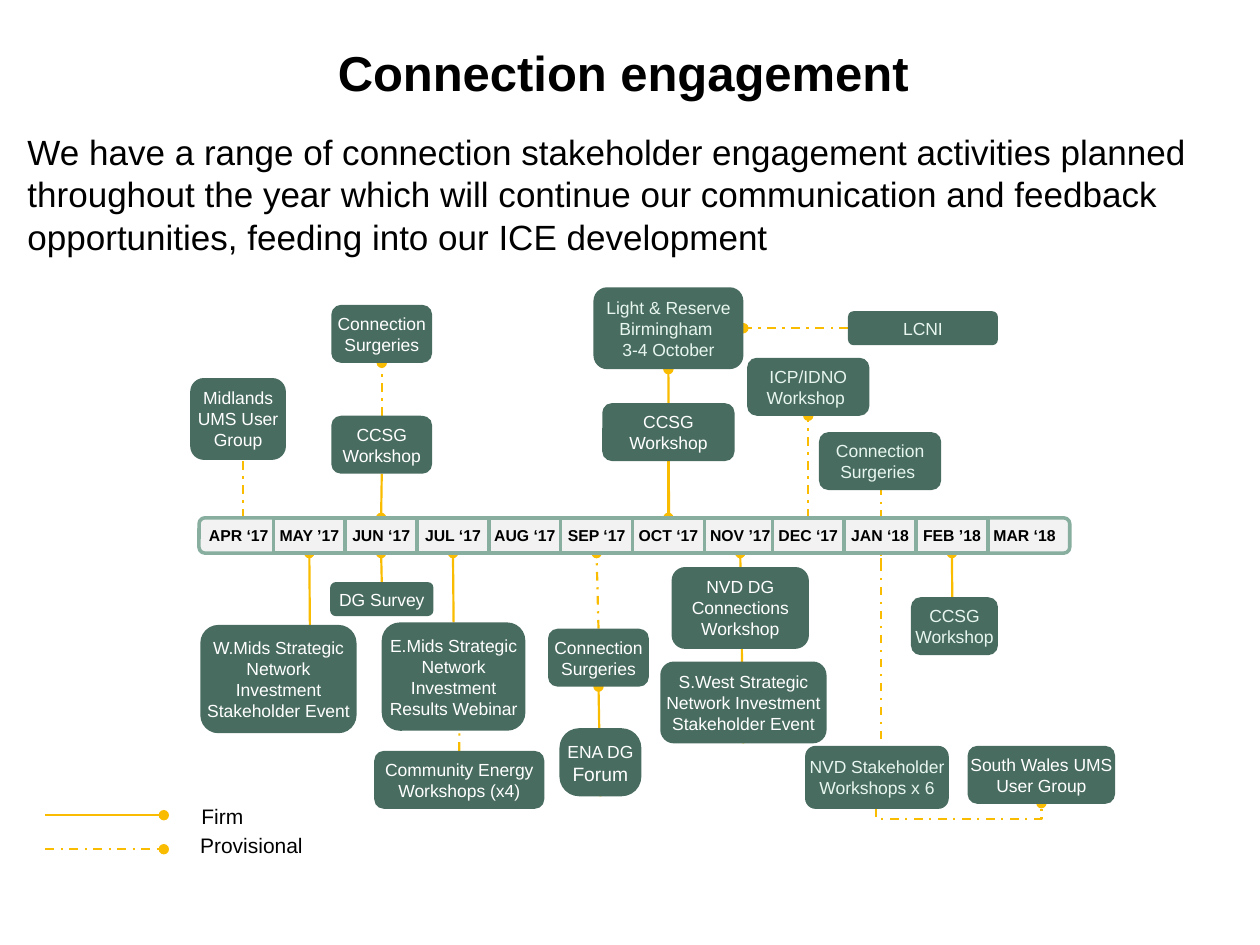
from lxml import etree
from pptx import Presentation
from pptx.dml.color import RGBColor
from pptx.enum.dml import MSO_LINE
from pptx.enum.shapes import MSO_CONNECTOR, MSO_SHAPE
from pptx.enum.text import MSO_ANCHOR, PP_ALIGN
from pptx.oxml.ns import qn
from pptx.util import Inches, Pt

RECT, ROUND = MSO_SHAPE.RECTANGLE, MSO_SHAPE.ROUNDED_RECTANGLE
LINE, ELBOW = MSO_CONNECTOR.STRAIGHT, MSO_CONNECTOR.ELBOW
CENTER, RIGHT = PP_ALIGN.CENTER, PP_ALIGN.RIGHT
TOP, MIDDLE = MSO_ANCHOR.TOP, MSO_ANCHOR.MIDDLE
DASH = MSO_LINE.DASH_DOT
HEX = {"box": "496C60", "line": "F9BC00", "month": "F2F2F2", "edge": "87AE9F",
       "black": "000000", "white": "FFFFFF", "pale": "E7F6EF"}
RGB = {name: RGBColor.from_string(code) for name, code in HEX.items()}

deck = Presentation()
deck.slide_width, deck.slide_height = Inches(10), Inches(7.5)
slide = deck.slides.add_slide(deck.slide_layouts[5])
items = slide.shapes
COL, ROW = deck.slide_width / 100, deck.slide_height / 75


def place(x, y, w, h):
    """Turn grid columns and rows into lengths."""
    return int(x * COL), int(y * ROW), int(w * COL), int(h * ROW)


def write(shape, text, size, color, align=None, anchor=TOP, bold=False):
    frame = shape.text_frame
    frame.word_wrap, frame.vertical_anchor = True, anchor
    frame.text = text
    for para in frame.paragraphs:
        para.alignment = align
        font = para.font
        font.name, font.size, font.bold = "Arial", Pt(size), bold
        font.color.rgb = RGB[color]
    return frame


# Title
title = items.title
title.left, title.top, title.width, title.height = place(7.5, 2.9, 85, 12.5)
write(title, "Connection engagement ", 28, "black", CENTER, bold=True)

# Bulleted lead text
lead = items.add_textbox(*place(1.2, 9.9, 97.6, 14.2))
lead.text_frame.text = ""
props = lead.text_frame.paragraphs[0]._p.get_or_add_pPr()
props.set("marL", str(Inches(0.81)))
props.set("indent", str(Inches(-0.31)))
etree.SubElement(props, qn("a:buFont")).set("typeface", "Arial")
etree.SubElement(props, qn("a:buChar")).set("char", "▪")
write(lead, "We have a range of connection stakeholder engagement activities planned "
      "throughout the year which will continue our communication and feedback "
      "opportunities, feeding into our ICE development", 20, "black")

# Month strip: the two rounded ends lie beneath their neighbours
MONTHS = ["APR ‘17", "MAY ’17", "JUN ‘17", "JUL ‘17", "AUG ‘17", "SEP ‘17",
          "OCT ‘17", "NOV ’17", "DEC ‘17", "JAN ‘18", "FEB ’18", "MAR ‘18"]
STEP = 5.7
ENDS = {0: (15.8, 6.3), 11: (78, 6.9)}
nodes = {}
for i in sorted(range(12), key=lambda n: n not in ENDS):
    shift = 0.3 if i > 7 else 0
    x, w = ENDS.get(i, (16 + STEP * i - shift, STEP))
    cell = items.add_shape(ROUND if i in ENDS else RECT, *place(x, 41.1, w, 2.8))
    cell.shadow.inherit = False
    cell.fill.solid()
    cell.fill.fore_color.rgb = RGB["month"]
    cell.line.color.rgb, cell.line.width = RGB["edge"], Pt(2)
    last = i == 11
    frame = write(cell, MONTHS[i], 9, "black", RIGHT if last else CENTER, MIDDLE, True)
    frame.margin_left = Inches(0.04)
    frame.margin_right = Inches(0.1 if last else 0.04)
    nodes[MONTHS[i][:3]] = cell

# Event boxes: key, text, column, row, width, height, text colour
ONE, TWO, THREE, FOUR = 2.7, 4.6, 6.5, 8.6
EVENTS = [
    ("sep", "Connection Surgeries", 43.5, 49.9, 8, TWO, "white"),
    ("forum", "ENA DG", 44.4, 57.8, 6.5, 5.4, "white"),
    ("talks", "NVD Stakeholder Workshops x 6", 63.9, 59.2, 11.4, 5, "pale"),
    ("ums", "Midlands UMS User Group", 15.1, 30, 7.6, THREE, "white"),
    ("solar", "Light & Reserve Birmingham \n3-4 October", 47.1, 22.8, 11.9, THREE, "pale"),
    ("jun", "Connection Surgeries", 26.3, 24.2, 8, TWO, "white"),
    ("jan", "Connection Surgeries ", 65, 34.3, 9.7, TWO, "pale"),
    ("feb", "CCSG Workshop", 72.3, 47.4, 6.9, TWO, "pale"),
    ("nov", "NVD DG Connections Workshop", 53.3, 45, 10.9, THREE, "white"),
    ("ccsg jun", "CCSG Workshop", 26.3, 33, 8, TWO, "white"),
    ("ccsg oct", "CCSG Workshop", 47.8, 32, 10.5, TWO, "white"),
    ("energy", "Community Energy Workshops (x4)", 29.7, 59.6, 13.5, TWO, "white"),
    ("survey", "DG Survey", 26.2, 46.2, 8.2, ONE, "white"),
    ("wales", "South Wales UMS User Group", 76.8, 59.2, 11.7, TWO, "white"),
    ("lcni", "LCNI", 67.3, 24.7, 11.9, ONE, "pale"),
    ("west", "W.Mids Strategic Network Investment Stakeholder Event",
     15.9, 49.6, 12.4, FOUR, "white"),
    ("east", "E.Mids Strategic Network Investment Results Webinar",
     30.3, 49.4, 11.4, FOUR, "white"),
    ("south", "S.West Strategic Network Investment Stakeholder Event",
     52.4, 52.5, 13.2, THREE, "white"),
    ("icp", "ICP/IDNO Workshop ", 59.3, 28.4, 9.7, TWO, "pale"),
]
for key, text, x, y, w, h, color in EVENTS:
    box = items.add_shape(ROUND, *place(x, y, w, h))
    box.shadow.inherit = False
    box.fill.solid()
    box.fill.fore_color.rgb = RGB["box"]
    box.line.fill.background()
    frame = write(box, text, 10, color, CENTER, MIDDLE)
    frame.margin_left = frame.margin_right = 0
    frame.margin_top = frame.margin_bottom = Inches(0.04)
    nodes[key] = box

# The forum box has rounder corners and a larger second word
forum = nodes["forum"]
forum.adjustments[0] = 0.29
word = forum.text_frame.paragraphs[0].add_run()
word.text, word.font.size = " Forum", Pt(11)

# Links behind the boxes: an end is (box, side) or (column, row)
UP, LEFT, DOWN, SIDE = range(4)
LINKS = [
    (("south", DOWN), ("NOV", DOWN), None),
    (("east", UP), ("JUL", DOWN), None),
    ((69.9, 45), (69.9, 35.8), DASH),
    ((69.9, 62.5), (69.9, 42.3), DASH),
    ((53.1, 41.4), ("solar", DOWN), None),
    (("ccsg jun", UP), ("jun", DOWN), DASH),
    (("DEC", UP), ("icp", DOWN), DASH),
    ((24.6, 50.3), ("MAY", DOWN), None),
    (("lcni", LEFT), ("solar", SIDE), DASH),
    (("sep", UP), ("SEP", DOWN), DASH),
    (("ccsg jun", DOWN), ("JUN", UP), None),
    (("survey", UP), ("JUN", DOWN), None),
    (("energy", UP), (36.5, 53), DASH),
    ((75.6, 49.7), ("FEB", DOWN), None),
    (("ccsg oct", DOWN), ("OCT", UP), None),
    ((19.3, 43), (19.3, 33.2), DASH),
    (("forum", DOWN), ("sep", DOWN), None),
    ((3.6, 64.7), (13, 64.7), None),
    ((3.6, 67.4), (13, 67.4), DASH),
    ((76.3, 70.5), (75.9, 57.4), DASH),
]
BENT = len(LINKS) - 1
for i, (start, stop, dash) in enumerate(LINKS):
    free = [(0, 0) if end[0] in nodes else end for end in (start, stop)]
    link = items.add_connector(ELBOW if i == BENT else LINE,
                               *place(*free[0], *free[1]))
    if start[0] in nodes:
        link.begin_connect(nodes[start[0]], start[1])
    if stop[0] in nodes:
        link.end_connect(nodes[stop[0]], stop[1])
    link.line.color.rgb, link.line.width = RGB["line"], Pt(1.25)
    if dash:
        link.line.dash_style = dash
    etree.SubElement(link.line._get_or_add_ln(), qn("a:tailEnd")).set("type", "oval")
    shape = link._element.spPr
    etree.SubElement(shape, qn("a:effectLst"))
    if i == BENT:
        # Quarter turn, with the middle leg pushed below both boxes
        shape.find(qn("a:xfrm")).set("rot", "5400000")
        guide = etree.SubElement(shape.find(qn("a:prstGeom")).find(qn("a:avLst")), qn("a:gd"))
        guide.set("name", "adj1")
        guide.set("fmla", "val -206600")
    items._spTree.insert(2 + i, link._element)

# Legend
for text, x, y, w in [("Provisional", 14.9, 65.6, 14.3), ("Firm", 15, 63.3, 9.8)]:
    write(items.add_textbox(*place(x, y, w, 3)), text, 12, "black")

deck.save("out.pptx")
